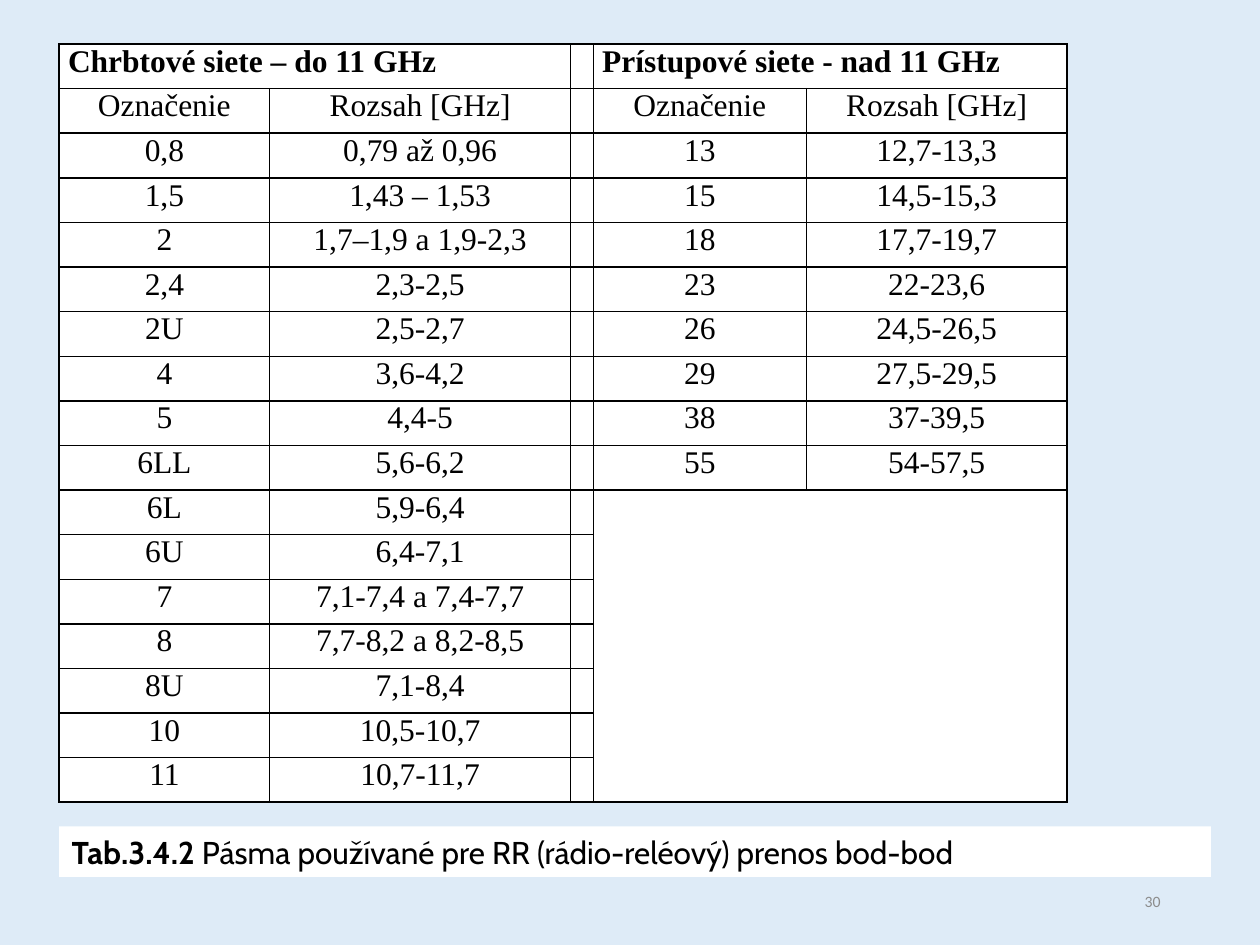
from typing import NamedTuple

from lxml import etree
from pptx import Presentation
from pptx.dml.color import RGBColor
from pptx.enum.shapes import MSO_SHAPE
from pptx.enum.text import MSO_ANCHOR, PP_ALIGN
from pptx.oxml.ns import qn
from pptx.util import Inches, Pt

LEFT, CENTER, RIGHT = PP_ALIGN.LEFT, PP_ALIGN.CENTER, PP_ALIGN.RIGHT
TOP, MIDDLE = MSO_ANCHOR.TOP, MSO_ANCHOR.MIDDLE
RECT = MSO_SHAPE.RECTANGLE
BLACK, WHITE, GRAY, SKY = "000000", "FFFFFF", "8C8C8C", "DEEBF7"
SERIF = "Times New Roman"
WIDTHS = [1.67, 2.39, 0.18, 1.69, 2.07]
HEIGHT = 6.02
THIN, THICK = 1, 1.5


class Band(NamedTuple):
    name: str
    span: str


class Group(NamedTuple):
    title: str
    col: int
    bands: list[Band]


HEAD = Band("Označenie", "Rozsah [GHz]")
GROUPS = [
    Group("Chrbtové siete – do 11 GHz", 0, [
        Band("0,8", "0,79 až 0,96"),
        Band("1,5", "1,43 – 1,53"),
        Band("2", "1,7–1,9 a 1,9-2,3"),
        Band("2,4", "2,3-2,5"),
        Band("2U", "2,5-2,7"),
        Band("4", "3,6-4,2"),
        Band("5", "4,4-5"),
        Band("6LL", "5,6-6,2"),
        Band("6L", "5,9-6,4"),
        Band("6U", "6,4-7,1"),
        Band("7", "7,1-7,4 a 7,4-7,7"),
        Band("8", "7,7-8,2 a 8,2-8,5"),
        Band("8U", "7,1-8,4"),
        Band("10", "10,5-10,7"),
        Band("11", "10,7-11,7"),
    ]),
    Group("Prístupové siete - nad 11 GHz", 3, [
        Band("13", "12,7-13,3"),
        Band("15", "14,5-15,3"),
        Band("18", "17,7-19,7"),
        Band("23", "22-23,6"),
        Band("26", "24,5-26,5"),
        Band("29", "27,5-29,5"),
        Band("38", "37-39,5"),
        Band("55", "54-57,5"),
    ]),
]


def paint(color: str) -> RGBColor:
    return RGBColor.from_string(color)


def write(frame, text: str, *, font: str = SERIF, size: float = 18,
          color: str = BLACK, bold: bool = False, align=CENTER) -> None:
    par = frame.paragraphs[0]
    par.alignment = align
    run = par.add_run()
    run.text = text
    run.font.name = font
    run.font.size = Pt(size)
    run.font.bold = bold
    run.font.color.rgb = paint(color)


def edge(cell, side: str, width: float) -> None:
    line = etree.SubElement(cell._tc.get_or_add_tcPr(), qn(f"a:ln{side}"),
                            w=str(Pt(width)))
    fill = etree.SubElement(line, qn("a:solidFill"))
    etree.SubElement(fill, qn("a:srgbClr"), val=BLACK)


def style(cell, row: int) -> None:
    cell.margin_left = cell.margin_right = Inches(0.07)
    cell.margin_top = cell.margin_bottom = 0
    edge(cell, "L", THIN)
    edge(cell, "R", THIN)
    edge(cell, "T", THICK if row == 2 else THIN)
    edge(cell, "B", THICK if row == 1 else THIN)
    cell.fill.solid()
    cell.fill.fore_color.rgb = paint(WHITE)


def fill_group(table, group: Group) -> None:
    col, last = group.col, len(table.rows) - 1
    title = table.cell(0, col)
    title.merge(table.cell(0, col + 1))
    write(title.text_frame, group.title, bold=True, align=LEFT)
    for row, band in enumerate([HEAD, *group.bands], 1):
        for step, text in enumerate(band):
            write(table.cell(row, col + step).text_frame, text)
    rest = len(group.bands) + 2
    if rest <= last:
        table.cell(rest, col).merge(table.cell(last, col + 1))


def add_bands(slide) -> None:
    count = 2 + max(len(group.bands) for group in GROUPS)
    table = slide.shapes.add_table(
        count, len(WIDTHS), Inches(0.47), Inches(0.35),
        Inches(sum(WIDTHS)), Inches(HEIGHT)).table
    table.first_row = table.horz_banding = False
    for col, width in zip(table.columns, WIDTHS):
        col.width = Inches(width)
    for index, row in enumerate(table.rows):
        row.height = Inches(HEIGHT / count)
        for cell in row.cells:
            style(cell, index)
    for group in GROUPS:
        fill_group(table, group)


def add_label(slide) -> None:
    box = slide.shapes.add_shape(RECT, Inches(0.47), Inches(6.56),
                                 Inches(9.14), Inches(0.4))
    box.shadow.inherit = False
    box.fill.solid()
    box.fill.fore_color.rgb = paint(WHITE)
    box.line.fill.background()
    frame = box.text_frame
    frame.word_wrap = True
    frame.vertical_anchor = TOP
    write(frame, "Tab.3.4.2", font="Cabin", bold=True, align=LEFT)
    write(frame, " Pásma používané pre RR (rádio-reléový) prenos bod-bod",
          font="Cabin", align=LEFT)


def add_number(slide) -> None:
    box = slide.shapes.add_textbox(Inches(7.06), Inches(6.95),
                                   Inches(2.25), Inches(0.4))
    frame = box.text_frame
    frame.word_wrap = True
    frame.vertical_anchor = MIDDLE
    write(frame, "30", font="Calibri", size=9, color=GRAY, align=RIGHT)


def main() -> None:
    deck = Presentation()
    deck.slide_width, deck.slide_height = Inches(10), Inches(7.5)
    slide = deck.slides.add_slide(deck.slide_layouts[6])
    slide.background.fill.solid()
    slide.background.fill.fore_color.rgb = paint(SKY)
    add_number(slide)
    add_label(slide)
    add_bands(slide)
    deck.save("out.pptx")


if __name__ == "__main__":
    main()
